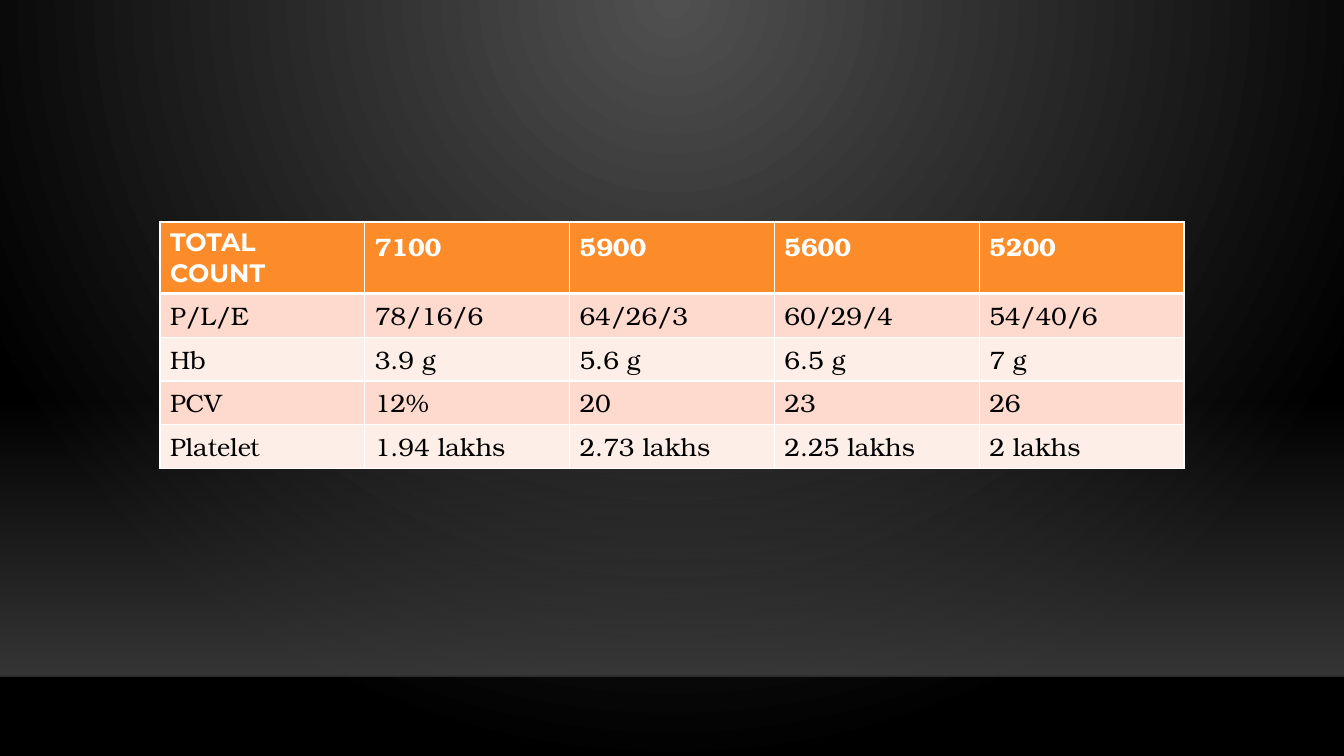
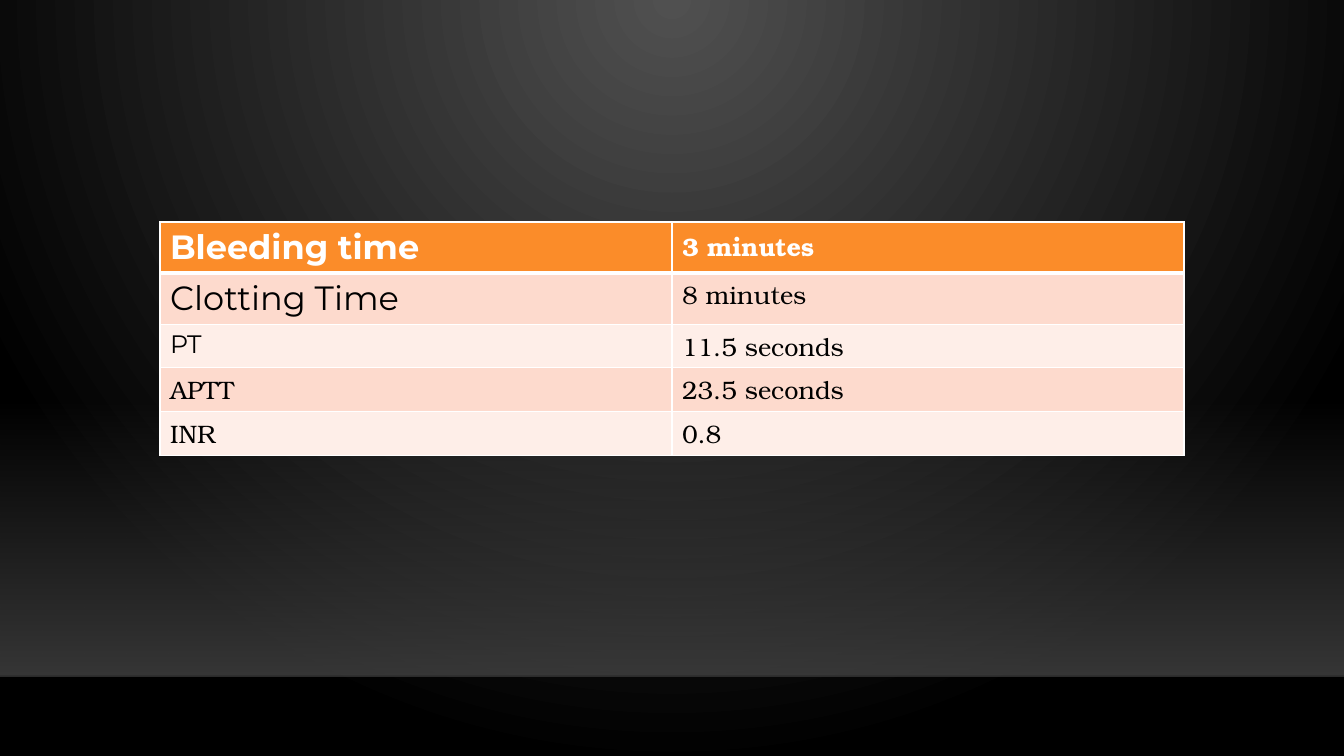
from lxml.etree import SubElement
from pptx import Presentation
from pptx.dml.color import RGBColor
from pptx.enum.shapes import MSO_CONNECTOR, MSO_SHAPE
from pptx.oxml import parse_xml
from pptx.oxml.ns import nsdecls, qn
from pptx.util import Pt

WIDTH, HEIGHT = 960, 540
BAND_BOX = (0, 285, WIDTH, 198)
TABLE_BOX = (114.25, 158.5, 731.5, 146)
SERIF, SANS = "TeX Gyre Bonum", "Montserrat"
WHITE, BLACK, ORANGE = "FFFFFF", "000000", "FB8C29"
ROW_FILLS = ("FDDACD", "FEEEE8")

BLOOD_COUNTS = [
    ["TOTAL COUNT", "7100", "5900", "5600", "5200"],
    ["P/L/E", "78/16/6", "64/26/3", "60/29/4", "54/40/6"],
    ["Hb", "3.9 g", "5.6 g", "6.5 g", "7 g"],
    ["PCV", "12%", "20", "23", "26"],
    ["Platelet", "1.94 lakhs", "2.73 lakhs", "2.25 lakhs", "2 lakhs"],
]
CLOTTING_TESTS = [
    ["Bleeding time", "3 minutes"],
    ["Clotting Time", "8 minutes"],
    ["PT", "11.5 seconds"],
    ["APTT", "23.5 seconds"],
    ["INR", "0.8"],
]
SANS_SIZES = {"TOTAL COUNT": 18, "Bleeding time": 24, "Clotting Time": 24, "PT": 18}


def color(hex_code):
    return RGBColor.from_string(hex_code)


def set_gradient(properties, stops, direction):
    stop_list = "".join(
        f'<a:gs pos="{position * 1000}"><a:srgbClr val="{hex_code}">'
        f'<a:alpha val="{alpha * 1000}"/></a:srgbClr></a:gs>'
        for position, hex_code, alpha in stops
    )
    gradient = parse_xml(
        f'<a:gradFill {nsdecls("a")} rotWithShape="1">'
        f"<a:gsLst>{stop_list}</a:gsLst>{direction}</a:gradFill>"
    )
    properties.replace(properties.find(qn("a:noFill")), gradient)


def set_background(master):
    master.background.fill.background()
    set_gradient(
        master.element.xpath(".//p:bgPr")[0],
        [(0, "505050", 100), (100, BLACK, 100)],
        '<a:path path="circle"><a:fillToRect l="43000" t="0" r="43000" b="100000"/></a:path>',
    )


def add_floor_band(slide, left, top, width, height):
    band = slide.shapes.add_shape(
        MSO_SHAPE.RECTANGLE, Pt(left), Pt(top), Pt(width), Pt(height)
    )
    band.shadow.inherit = False
    band.line.fill.background()
    band.fill.background()
    set_gradient(
        band.element.spPr,
        [(0, "454545", 0), (100, "454545", 80)],
        '<a:lin ang="5400000" scaled="0"/>',
    )
    bottom = Pt(top + height)
    edge = slide.shapes.add_connector(
        MSO_CONNECTOR.STRAIGHT, Pt(left), bottom, Pt(left + width), bottom
    )
    edge.line.width = Pt(1)
    edge.line.color.rgb = color(BLACK)
    shade = edge.element.spPr.find(".//" + qn("a:srgbClr"))
    SubElement(shade, qn("a:alpha"), val="20000")
    SubElement(edge.element.spPr, qn("a:effectLst"))


def set_borders(cell, top, bottom):
    widths = {"lnL": 1, "lnR": 1, "lnT": top, "lnB": bottom}
    for index, (side, width) in enumerate(widths.items()):
        border = parse_xml(
            f'<a:{side} {nsdecls("a")} w="{Pt(width)}"><a:solidFill>'
            f'<a:srgbClr val="{WHITE}"/></a:solidFill></a:{side}>'
        )
        cell._tc.get_or_add_tcPr().insert(index, border)


def fill_cell(cell, text, row):
    header = row == 0
    cell.fill.solid()
    cell.fill.fore_color.rgb = color(ORANGE if header else ROW_FILLS[(row - 1) % 2])
    set_borders(cell, 3 if row == 1 else 1, 3 if header else 1)
    cell.text = text
    font = cell.text_frame.paragraphs[0].font
    font.name = SANS if text in SANS_SIZES else SERIF
    font.size = Pt(SANS_SIZES.get(text, 18))
    font.bold = header
    font.color.rgb = color(WHITE if header else BLACK)


def add_results_table(slide, rows, left, top, width, height):
    column_count = len(rows[0])
    table = slide.shapes.add_table(
        len(rows), column_count, Pt(left), Pt(top), Pt(width), Pt(height)
    ).table
    table.first_row = False
    table.horz_banding = False
    for column in table.columns:
        column.width = Pt(width / column_count)
    for row, texts in enumerate(rows):
        for column, text in enumerate(texts):
            fill_cell(table.cell(row, column), text, row)


def add_results_slide(presentation, rows):
    slide = presentation.slides.add_slide(presentation.slide_layouts[6])
    add_floor_band(slide, *BAND_BOX)
    add_results_table(slide, rows, *TABLE_BOX)


def main():
    presentation = Presentation()
    presentation.slide_width, presentation.slide_height = Pt(WIDTH), Pt(HEIGHT)
    set_background(presentation.slide_master)
    for rows in (BLOOD_COUNTS, CLOTTING_TESTS):
        add_results_slide(presentation, rows)
    presentation.save("out.pptx")


if __name__ == "__main__":
    main()
